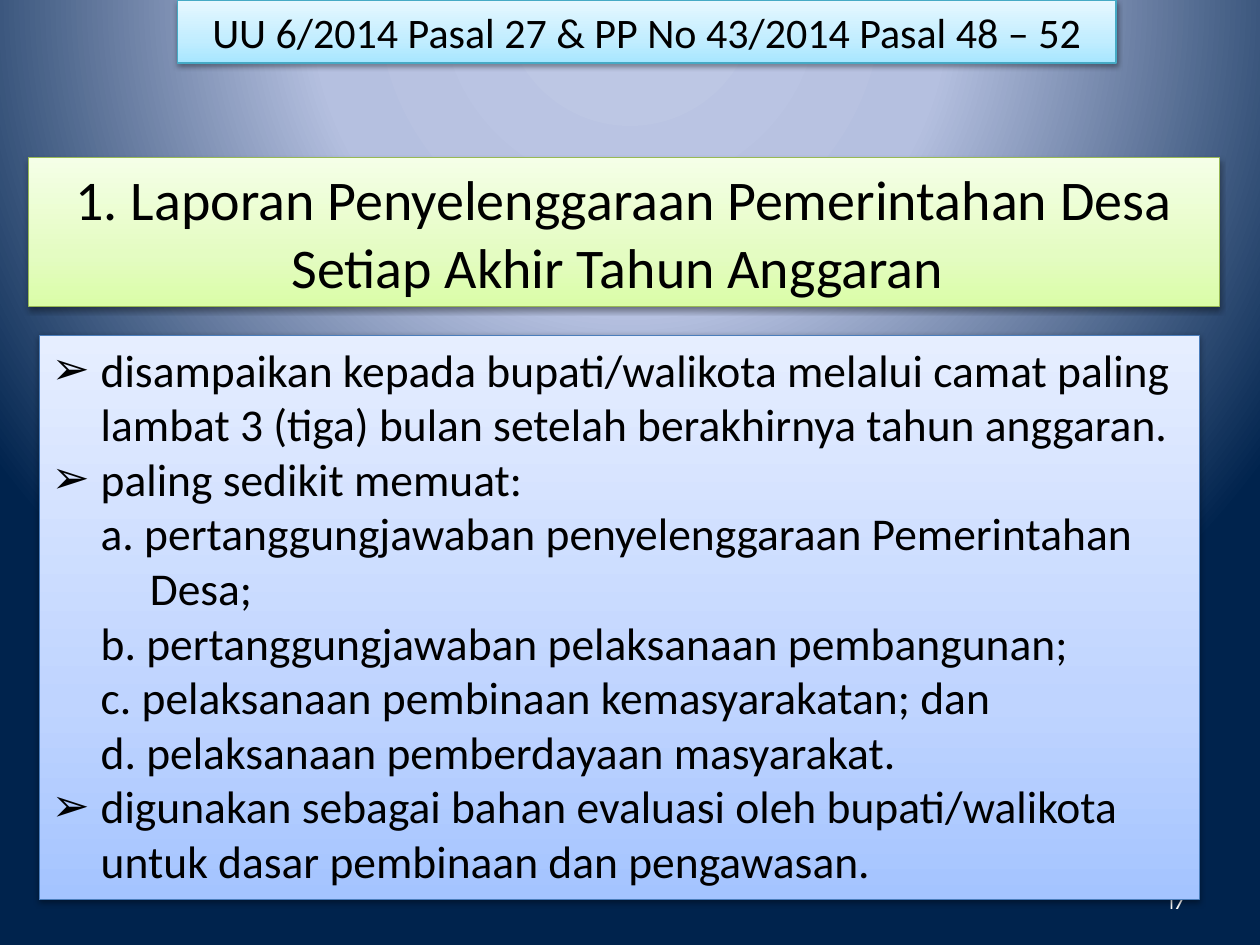
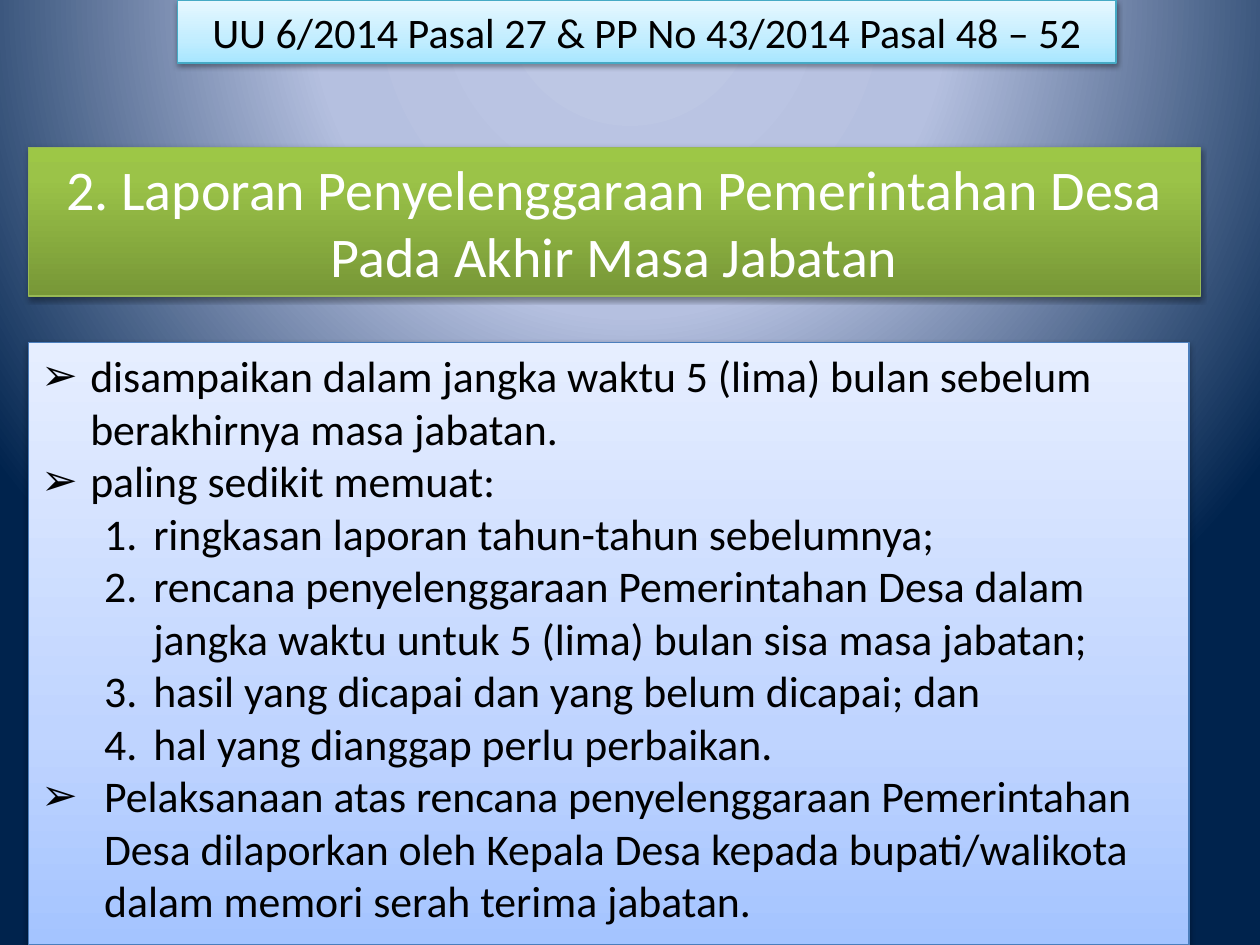
import lxml.etree
import pptx
import pptx.dml.color
import pptx.enum.shapes
import pptx.enum.text
import pptx.oxml.ns
import pptx.util

Cm, Pt = pptx.util.Cm, pptx.util.Pt
RGBColor = pptx.dml.color.RGBColor
qn = pptx.oxml.ns.qn
ALIGN = pptx.enum.text.PP_ALIGN
ANCHOR = pptx.enum.text.MSO_ANCHOR

BLACK = RGBColor(0x00, 0x00, 0x00)
WHITE = RGBColor(0xFF, 0xFF, 0xFF)
GREEN_LINE = RGBColor(0x98, 0xB9, 0x55)
BLUE_LINE = RGBColor(0x4B, 0x7E, 0xBC)
AQUA_LINE = RGBColor(0x46, 0xAA, 0xC5)
BACKDROP = [(0, RGBColor(0xBF, 0xC9, 0xE5)), (40, RGBColor(0xB5, 0xC0, 0xE0)),
            (100, RGBColor(0x00, 0x23, 0x4D))]
PALE_GREEN = [(0, RGBColor(0xDA, 0xFD, 0xA7)), (35, RGBColor(0xE4, 0xFC, 0xC2)),
              (100, RGBColor(0xF5, 0xFF, 0xE7))]
DEEP_GREEN = [(0, RGBColor(0x77, 0x97, 0x37)), (80, RGBColor(0x9B, 0xC3, 0x48)),
              (100, RGBColor(0x9D, 0xC7, 0x46))]
BLUE = [(0, RGBColor(0xA4, 0xC4, 0xFF)), (35, RGBColor(0xBF, 0xD4, 0xFF)),
        (100, RGBColor(0xE6, 0xEE, 0xFF))]
AQUA = [(0, RGBColor(0xA7, 0xE6, 0xFF)), (35, RGBColor(0xC1, 0xED, 0xFF)),
        (100, RGBColor(0xE7, 0xF8, 0xFF))]

HEADER = "UU 6/2014 Pasal 27 & PP No 43/2014 Pasal 48 – 52"
HEADER_BOX = (3.58, 0, 18.92, 1.27)
NUMBER_BOX = (18.21, 17.65, 5.92, 1.02)

FRAME = {"word_wrap": True, "auto_size": pptx.enum.text.MSO_AUTO_SIZE.NONE,
         "margin_left": Cm(0.25), "margin_right": Cm(0.25),
         "margin_top": Cm(0.13), "margin_bottom": Cm(0.13)}
ARROW = ("buChar", {"char": "➢"})
STYLES = {
    "point": {"level": 0, "left": 0.99, "hang": 0.99, "bullet": ARROW},
    "wide": {"level": 0, "left": 1.27, "hang": 1.27, "bullet": ARROW},
    "letter": {"level": 0, "left": 1.98, "hang": 0.99, "bullet": ("buNone", {})},
    "number": {"level": 1, "left": 2.26, "hang": 0.99,
               "bullet": ("buAutoNum", {"type": "arabicPeriod"})},
}

REPORTS = [
    {"title": "1. Laporan Penyelenggaraan Pemerintahan Desa Setiap Akhir Tahun Anggaran ",
     "title_box": (0.58, 3.18, 24, 3), "stops": PALE_GREEN, "color": BLACK,
     "body_box": (0.79, 6.76, 23.39, 11.38), "size": 26, "page": "17",
     "items": [
         ("point", "disampaikan kepada bupati/walikota melalui camat paling lambat "
                   "3 (tiga) bulan setelah berakhirnya tahun anggaran."),
         ("point", "paling sedikit memuat:"),
         ("letter", "a. pertanggungjawaban penyelenggaraan Pemerintahan Desa;"),
         ("letter", "b. pertanggungjawaban pelaksanaan pembangunan;"),
         ("letter", "c. pelaksanaan pembinaan kemasyarakatan; dan"),
         ("letter", "d. pelaksanaan pemberdayaan masyarakat."),
         ("point", "digunakan sebagai bahan evaluasi oleh bupati/walikota untuk "
                   "dasar pembinaan dan pengawasan.")]},
    {"title": "2. Laporan Penyelenggaraan Pemerintahan Desa Pada Akhir Masa Jabatan",
     "title_box": (0.58, 2.97, 23.62, 3), "stops": DEEP_GREEN, "color": WHITE,
     "body_box": (0.58, 6.91, 23.39, 12.14), "size": 25, "page": None,
     "items": [
         ("point", "disampaikan dalam jangka waktu 5 (lima) bulan sebelum "
                   "berakhirnya masa jabatan."),
         ("point", "paling sedikit memuat:"),
         ("number", "ringkasan laporan tahun-tahun sebelumnya;"),
         ("number", "rencana penyelenggaraan Pemerintahan Desa dalam jangka waktu "
                    "untuk 5 (lima) bulan sisa masa jabatan;"),
         ("number", "hasil yang dicapai dan yang belum dicapai; dan"),
         ("number", "hal yang dianggap perlu perbaikan."),
         ("wide", "Pelaksanaan atas rencana penyelenggaraan Pemerintahan Desa "
                  "dilaporkan oleh Kepala Desa kepada bupati/walikota dalam memori "
                  "serah terima jabatan.")]},
]


def apply(obj, values):
    """Set each attribute of obj from a dict."""
    for name, value in values.items():
        setattr(obj, name, value)


def add_node(parent, tag, **attrs):
    """Append a DrawingML element with the given attributes."""
    return lxml.etree.SubElement(parent, qn("a:" + tag),
                                 {k: str(v) for k, v in attrs.items()})


def set_stops(grad, stops):
    """Replace the stops of a gradient element."""
    gs_lst = grad.find(qn("a:gsLst"))
    for gs in list(gs_lst):
        gs_lst.remove(gs)
    for pos, color in stops:
        gs = add_node(gs_lst, "gs", pos=pos * 1000)
        add_node(gs, "srgbClr", val=color)


def paint_backdrop(master):
    """Give the master the circular blue gradient."""
    master.background.fill.gradient()
    grad = master.element.xpath("p:cSld/p:bg//a:gradFill")[0]
    set_stops(grad, BACKDROP)
    lin = grad.find(qn("a:lin"))
    if lin is not None:
        grad.remove(lin)
    path = add_node(grad, "path", path="circle")
    add_node(path, "fillToRect", l=50000, t=-80000, r=50000, b=180000)


def place(sp, box, anchor):
    """Put a shape in its box and format its text frame."""
    apply(sp, dict(zip(("left", "top", "width", "height"), map(Cm, box))))
    apply(sp.text_frame, {**FRAME, "vertical_anchor": anchor})


def style_panel(sp, box, stops, line, anchor=ANCHOR.TOP):
    """Make a shape a gradient panel with outline and soft shadow."""
    place(sp, box, anchor)
    sp.fill.gradient()
    sp.fill.gradient_angle = 90
    set_stops(sp.element.xpath("p:spPr/a:gradFill")[0], stops)
    sp.line.color.rgb = line
    sp.line.width = Pt(0.75)
    sp.shadow.inherit = False
    effects = sp.element.xpath("p:spPr/a:effectLst")[0]
    shadow = add_node(effects, "outerShdw", blurRad=40000, dist=20000,
                      dir=5400000, rotWithShape=0)
    add_node(add_node(shadow, "srgbClr", val=BLACK), "alpha", val=38000)


def write(p, text, size, color, align, font="Calibri"):
    """Write one formatted run in a paragraph."""
    apply(p, {"alignment": align, "space_before": Pt(0)})
    r = p.add_run()
    r.text = text
    apply(r.font, {"name": font, "size": Pt(size)})
    r.font.color.rgb = color


def add_header(slide, box):
    """Add the band naming the legal basis."""
    sp = slide.shapes.add_shape(pptx.enum.shapes.MSO_SHAPE.RECTANGLE, 0, 0, 0, 0)
    style_panel(sp, box, AQUA, AQUA_LINE)
    write(sp.text_frame.paragraphs[0], HEADER, 24, BLACK, ALIGN.CENTER)


def fill_title(slide, box, text, stops, color):
    """Format the title placeholder as a green panel."""
    sp = slide.shapes.title
    style_panel(sp, box, stops, GREEN_LINE, ANCHOR.MIDDLE)
    write(sp.text_frame.paragraphs[0], text, 32, color, ALIGN.CENTER)


def fill_body(slide, box, items, size):
    """Format the body placeholder as a blue panel with a list."""
    sp = slide.placeholders[1]
    style_panel(sp, box, BLUE, BLUE_LINE)
    tf = sp.text_frame
    for i, (kind, text) in enumerate(items):
        p = tf.add_paragraph() if i else tf.paragraphs[0]
        style = STYLES[kind]
        p.level = style["level"]
        write(p, text, size, BLACK, ALIGN.LEFT)
        pPr = p._p.get_or_add_pPr()
        pPr.set("marL", str(Cm(style["left"])))
        pPr.set("indent", str(-Cm(style["hang"])))
        tag, attrs = style["bullet"]
        add_node(pPr, tag, **attrs)


def add_page_number(slide, box, text):
    """Add the page number behind the panels."""
    sp = slide.shapes.add_textbox(0, 0, 0, 0)
    place(sp, box, ANCHOR.MIDDLE)
    write(sp.text_frame.paragraphs[0], text, 12, WHITE, ALIGN.RIGHT, "Karla")
    slide.shapes.element.insert(2, sp.element)


def build_report(prs, report):
    """Add one report slide."""
    slide = prs.slides.add_slide(prs.slide_layouts[1])
    fill_title(slide, report["title_box"], report["title"], report["stops"],
               report["color"])
    fill_body(slide, report["body_box"], report["items"], report["size"])
    add_header(slide, HEADER_BOX)
    if report["page"]:
        add_page_number(slide, NUMBER_BOX, report["page"])


def main():
    """Build and save the presentation."""
    prs = pptx.Presentation()
    apply(prs, {"slide_width": Cm(25.4), "slide_height": Cm(19.05)})
    paint_backdrop(prs.slide_master)
    for report in REPORTS:
        build_report(prs, report)
    prs.save("out.pptx")


if __name__ == "__main__":
    main()
